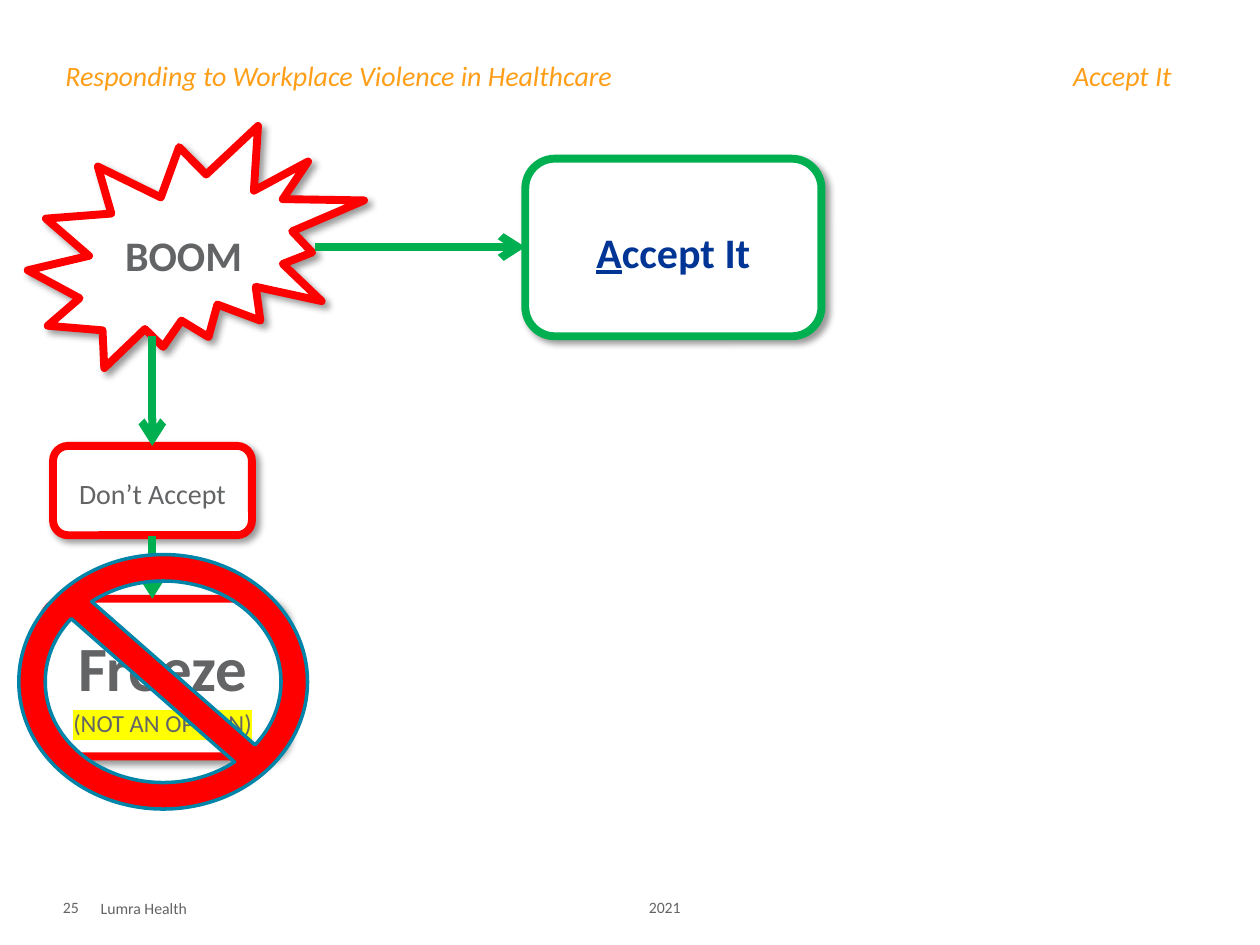
from lxml import etree
from pptx import Presentation
from pptx import util as u
from pptx.dml.color import RGBColor
from pptx.enum import shapes, text
from pptx.oxml import parse_xml
from pptx.oxml.ns import nsdecls, qn

RED, GREEN, WHITE = "FF0000", "00B050", "FFFFFF"
GRAY, NAVY, ORANGE, TEAL, YELLOW = "636466", "003595", "FF9F19", "0084A8", "FFFF00"
BORDER = 4.5
TOP, MIDDLE, BOTTOM = (text.MSO_ANCHOR.TOP, text.MSO_ANCHOR.MIDDLE,
                       text.MSO_ANCHOR.BOTTOM)


def color(value):
    return RGBColor.from_string(value)


def set_attributes(target, values):
    for name, value in values.items():
        setattr(target, name, value)


def add_span(para, words, size, ink=GRAY, highlight=None, **style):
    span = para.add_run()
    span.text = words
    span.font.color.rgb = color(ink)
    set_attributes(span.font, {"name": "Calibri", "size": u.Pt(size), **style})
    if highlight:
        mark = parse_xml(f'<a:highlight {nsdecls("a")}>'
                         f'<a:srgbClr val="{highlight}"/></a:highlight>')
        span.font._element.find(qn("a:solidFill")).addnext(mark)


def add_label(page, left, top, width, height, anchor, inset_top=0):
    """Add an empty text box without side margins and return its paragraph."""
    box = page.shapes.add_textbox(u.Cm(left), u.Cm(top), u.Cm(width), u.Cm(height))
    set_attributes(box.text_frame, {
        "word_wrap": True, "vertical_anchor": anchor,
        "margin_left": 0, "margin_right": 0,
        "margin_top": u.Cm(inset_top), "margin_bottom": 0})
    return box.text_frame.paragraphs[0]


def add_header(page, topic, section):
    para = add_label(page, 1.32, 1.19, 22.86, 2.13, TOP)
    tabs = etree.SubElement(para._p.get_or_add_pPr(), qn("a:tabLst"))
    etree.SubElement(tabs, qn("a:tab"), pos=str(u.Cm(22.3)), algn="r")
    add_span(para, f"{topic}\t{section}", 16, ORANGE, italic=True)


def add_figure(page, kind, left, top, width, height, fill, line, weight):
    figure = page.shapes.add_shape(kind, u.Cm(left), u.Cm(top),
                                   u.Cm(width), u.Cm(height))
    figure.shadow.inherit = False
    figure.fill.solid()
    figure.fill.fore_color.rgb = color(fill)
    figure.line.color.rgb = color(line)
    figure.line.width = u.Pt(weight)
    return figure


def add_shadow(figure):
    effects = figure._element.spPr.find(qn("a:effectLst"))
    effects.append(parse_xml(
        f'<a:outerShdw {nsdecls("a")} blurRad="{u.Pt(4)}" dist="{u.Pt(3)}" '
        'dir="2700000" algn="tl" rotWithShape="0"><a:srgbClr val="000000">'
        '<a:alpha val="40000"/></a:srgbClr></a:outerShdw>'))


def add_step(page, kind, place, line, lines):
    """Add a shadowed shape; lines holds paragraphs, each a list of span formats."""
    step = add_figure(page, kind, *place, WHITE, line, BORDER)
    add_shadow(step)
    frame = step.text_frame
    set_attributes(frame, {"word_wrap": True, "vertical_anchor": MIDDLE})
    for index, spans in enumerate(lines):
        para = frame.add_paragraph() if index else frame.paragraphs[0]
        last = index == len(lines) - 1
        set_attributes(para, {"alignment": text.PP_ALIGN.CENTER, "line_spacing": 1.15,
                              "space_after": u.Pt(10 if last else 0)})
        for span in spans:
            add_span(para, **span)


def add_arrow(page, *ends):
    arrow = page.shapes.add_connector(shapes.MSO_CONNECTOR.STRAIGHT,
                                      *(u.Cm(end) for end in ends))
    arrow.line.color.rgb = color(GREEN)
    arrow.line.width = u.Pt(BORDER)
    etree.SubElement(arrow.line._get_or_add_ln(), qn("a:tailEnd"), type="arrow")
    etree.SubElement(arrow._element.spPr, qn("a:effectLst"))


def main():
    deck = Presentation()
    deck.slide_width, deck.slide_height = u.Cm(25.4), u.Cm(19.05)
    page = deck.slides.add_slide(deck.slide_layouts[6])
    kinds = shapes.MSO_SHAPE
    rounded = kinds.ROUNDED_RECTANGLE
    down = 3.07  # shared centre line of the downward arrows

    add_header(page, "Responding to Workplace Violence in Healthcare", "Accept It")

    add_step(page, kinds.EXPLOSION2, (0.56, 2.54, 6.78, 4.88), RED,
             [[{"words": "BOOM", "size": 24, "bold": True}]])
    accept = {"size": 24, "ink": NAVY, "bold": True}
    add_step(page, rounded, (10.59, 3.2, 5.97, 3.58), GREEN,
             [[{"words": "A", "underline": True, **accept},
               {"words": "ccept It", **accept}]])
    add_arrow(page, 6.35, 4.98, 10.59, 4.98)

    add_step(page, rounded, (1.07, 8.99, 4.01, 1.8), RED,
             [[{"words": "Don’t Accept", "size": 16}]])
    add_arrow(page, down, 6.78, down, 8.99)

    add_step(page, rounded, (0.84, 12.07, 4.88, 3.18), RED,
             [[{"words": "Freeze", "size": 36, "bold": True}],
              [{"words": "(NOT AN OPTION)", "size": 14, "highlight": YELLOW}]])
    add_arrow(page, down, 10.8, down, 12.07)

    ban = add_figure(page, kinds.NO_SYMBOL, 0.38, 11.18, 5.82, 5.13, RED, TEAL, 2)
    ban.adjustments[0] = 0.104

    footers = [("2021", (13.08, 17.98, 4.06, 0.51, BOTTOM)),
               ("Lumra Health", (2.03, 17.98, 10.16, 0.51, MIDDLE, 0.13)),
               ("25", (1.27, 17.7, 1.27, 0.79, BOTTOM))]
    for words, place in footers:
        add_span(add_label(page, *place), words, 9)

    deck.save("out.pptx")


if __name__ == "__main__":
    main()
